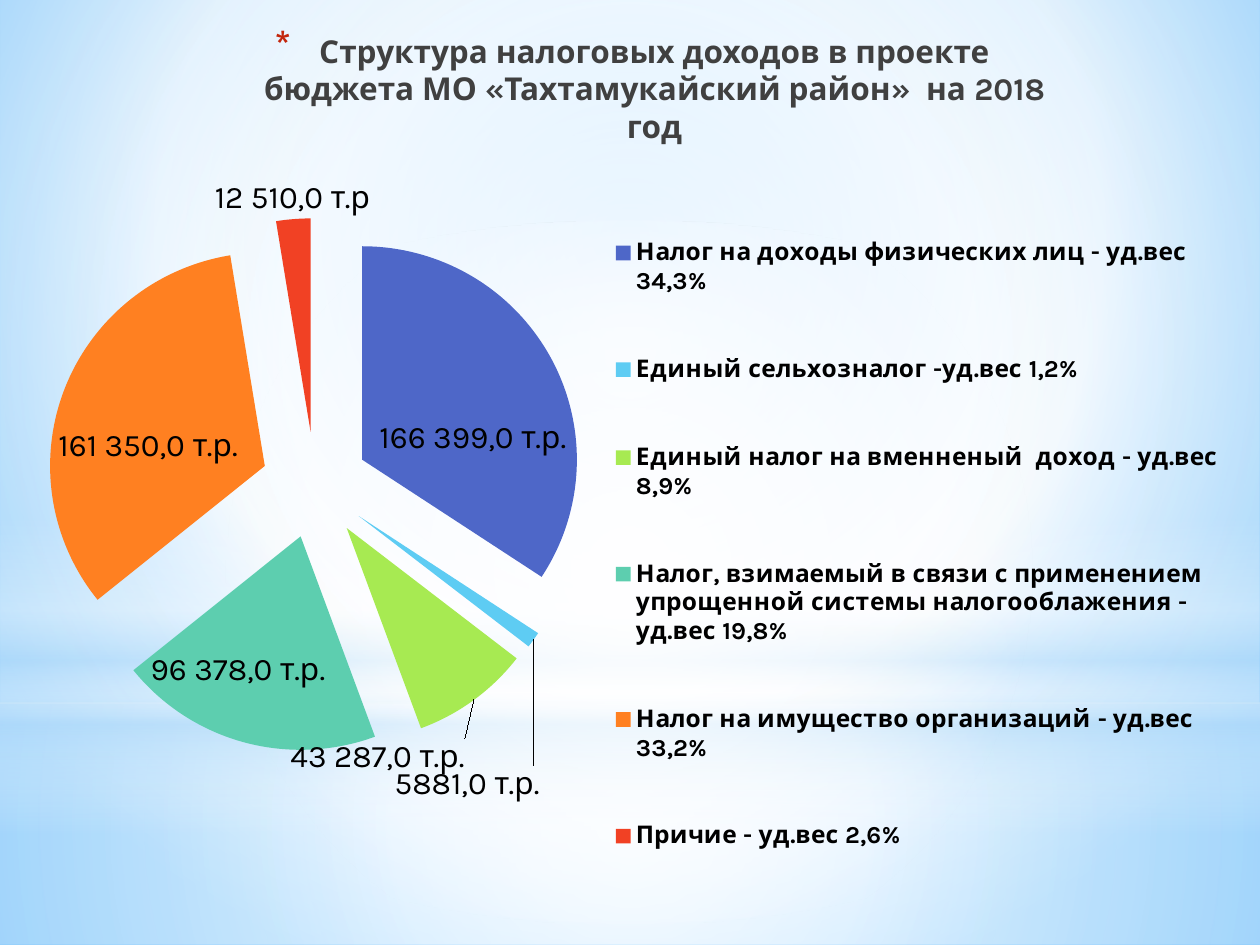
from lxml.etree import SubElement
from pptx import Presentation
from pptx.chart.data import CategoryChartData
from pptx.dml.color import RGBColor
from pptx.enum.chart import XL_CHART_TYPE, XL_LABEL_POSITION, XL_LEGEND_POSITION
from pptx.enum.shapes import MSO_SHAPE
from pptx.enum.text import MSO_ANCHOR, PP_ALIGN
from pptx.oxml.ns import qn
from pptx.util import Inches, Pt

FONT = "Karla"
BLACK = RGBColor(0x00, 0x00, 0x00)
DARK_GREY = RGBColor(0x40, 0x40, 0x40)
BULLET_RED = RGBColor(0xC3, 0x26, 0x0C)
WHITE = RGBColor(0xFF, 0xFF, 0xFF)
PALE_BLUE = RGBColor(0xB4, 0xDC, 0xFA)
SKY_BLUE = RGBColor(0x9E, 0xD5, 0xFF)
DEEP_SKY = RGBColor(0x5B, 0xB9, 0xFF)

TITLE_FORMAT = {"name": FONT, "size": Pt(18), "bold": True}
LABEL_FORMAT = {"name": FONT, "size": Pt(18), "bold": False}
LEGEND_FORMAT = {"name": FONT, "size": Pt(14), "bold": True}

TITLE = "Структура налоговых доходов в проекте бюджета МО «Тахтамукайский район»  на 2018 год"
CHART_WIDTH, CHART_HEIGHT = 9.76, 5.83
CENTER, OUTSIDE = XL_LABEL_POSITION.CENTER, XL_LABEL_POSITION.OUTSIDE_END
# category, value, slice colour, label, label position, label shift in inches
TAXES = [
    ("Налог на доходы физических лиц - уд.вес 34,3%", 166399,
     RGBColor(0x4E, 0x67, 0xC8), "166 399,0 т.р.", CENTER, (0.13, 0.23)),
    ("Единый сельхозналог -уд.вес 1,2%", 5881,
     RGBColor(0x5E, 0xCC, 0xF3), "5881,0 т.р.", OUTSIDE, (-1.15, 0.97)),
    ("Единый налог на вменненый  доход - уд.вес 8,9%", 43287,
     RGBColor(0xA7, 0xEA, 0x52), "43 287,0 т.р.", OUTSIDE, (-1.49, 0.26)),
    ("Налог, взимаемый в связи с применением  упрощенной системы "
     "налогооблажения - уд.вес 19,8%", 96378,
     RGBColor(0x5D, 0xCE, 0xAF), "96 378,0 т.р.", CENTER, (-0.27, 0.25)),
    ("Налог на имущество организаций - уд.вес 33,2%", 161350,
     RGBColor(0xFF, 0x80, 0x21), "161 350,0 т.р.", CENTER, (-0.13, 0.15)),
    ("Причие - уд.вес 2,6%", 12510,
     RGBColor(0xF1, 0x41, 0x24), "12 510,0 т.р", OUTSIDE, None),
]

MIDDLE = (50, 50, 50, 50)
# preset, (left, top, width, height), stops (position, colour, opacity), focus
GLOWS = [
    (MSO_SHAPE.RECTANGLE, (0, 5.58, 10, 1.92),
     [(0, WHITE, 91), (37, WHITE, 76), (100, PALE_BLUE, 79)], MIDDLE),
    (MSO_SHAPE.RECTANGLE, (0, 0, 10, 5.58),
     [(0, WHITE, 89), (48, WHITE, 62), (100, PALE_BLUE, 79)], MIDDLE),
    (MSO_SHAPE.RECTANGLE, (0, 4.12, 10, 2.5),
     [(0, WHITE, 0), (29, WHITE, 30), (45, PALE_BLUE, 40),
      (55, WHITE, 26), (65, PALE_BLUE, 60), (100, WHITE, 0)], None),
    (MSO_SHAPE.OVAL, (0, 1.75, 10, 5.58),
     [(0, WHITE, 100), (56, WHITE, 0)], MIDDLE),
]


def set_font(font, values, color):
    for attribute, value in values.items():
        setattr(font, attribute, value)
    font.color.rgb = color


def set_gradient(fill, owner, stops, focus):
    """Fill with a circular gradient around focus, or a vertical one without it."""
    fill.gradient()
    gradient = next(owner.iter(qn("a:gradFill")))
    for child in list(gradient):
        gradient.remove(child)
    stop_list = SubElement(gradient, qn("a:gsLst"))
    for position, color, opacity in stops:
        stop = SubElement(stop_list, qn("a:gs"), pos=str(position * 1000))
        shade = SubElement(stop, qn("a:srgbClr"), val=str(color))
        if opacity < 100:
            SubElement(shade, qn("a:alpha"), val=str(opacity * 1000))
    if focus:
        circle = SubElement(gradient, qn("a:path"), path="circle")
        sides = {side: str(part * 1000) for side, part in zip("ltrb", focus)}
        SubElement(circle, qn("a:fillToRect"), **sides)
    else:
        SubElement(gradient, qn("a:lin"), ang="5400000", scaled="0")


def add_glow(slide, preset, box, stops, focus):
    glow = slide.shapes.add_shape(preset, *map(Inches, box))
    glow.shadow.inherit = False
    glow.line.fill.background()
    set_gradient(glow.fill, glow.element.spPr, stops, focus)


def add_title(slide):
    title = slide.shapes.add_textbox(*map(Inches, (1.46, 0.19, 7.12, 1.02)))
    frame = title.text_frame
    frame.word_wrap = True
    frame.vertical_anchor = MSO_ANCHOR.MIDDLE
    paragraph = frame.paragraphs[0]
    paragraph.alignment = PP_ALIGN.CENTER
    run = paragraph.add_run()
    run.text = TITLE
    set_font(run.font, TITLE_FORMAT, DARK_GREY)
    properties = paragraph._p.get_or_add_pPr()
    properties.set("marL", str(Inches(0.35)))
    properties.set("indent", str(Inches(-0.35)))
    bullet_color = SubElement(properties, qn("a:buClr"))
    SubElement(bullet_color, qn("a:srgbClr"), val=str(BULLET_RED))
    SubElement(properties, qn("a:buSzPct"), val="128000")
    SubElement(properties, qn("a:buChar"), char="*")


def set_layout(parent, after, modes, **lengths):
    """Place a chart part by lengths in inches; its layout follows the child after."""
    for old in parent.findall(qn("c:layout")):
        parent.remove(old)
    layout = SubElement(parent, qn("c:layout"))
    manual = SubElement(layout, qn("c:manualLayout"))
    for tag, value in modes.items():
        SubElement(manual, qn(f"c:{tag}"), val=value)
    for tag, length in lengths.items():
        whole = CHART_WIDTH if tag in "xw" else CHART_HEIGHT
        SubElement(manual, qn(f"c:{tag}"), val=str(length / whole))
    if after:
        parent.find(qn(after)).addnext(layout)
    else:
        parent.insert(0, layout)


def add_tax_pie(slide):
    data = CategoryChartData(number_format="0.0")
    data.categories = [tax[0] for tax in TAXES]
    data.add_series("Series 1", [tax[1] for tax in TAXES])
    box = map(Inches, (0.12, 1.39, CHART_WIDTH, CHART_HEIGHT))
    chart = slide.shapes.add_chart(XL_CHART_TYPE.PIE, *box, data).chart
    chart.has_title = False
    set_font(chart.font, LABEL_FORMAT, BLACK)
    chart.has_legend = True
    legend = chart.legend
    legend.position = XL_LEGEND_POSITION.RIGHT
    legend.include_in_layout = False
    set_font(legend.font, LEGEND_FORMAT, BLACK)
    plot = chart.plots[0]
    plot.vary_by_categories = True
    series = plot.series[0]
    labels = series.data_labels
    labels.show_value = True
    labels.number_format = "0.0"
    labels.number_format_is_linked = False
    set_font(labels.font, LABEL_FORMAT, BLACK)
    for index, (_, _, color, text, position, _) in enumerate(TAXES):
        point = series.points[index]
        point.format.fill.solid()
        point.format.fill.fore_color.rgb = color
        point.format.line.fill.background()
        label = point.data_label
        run = label.text_frame.paragraphs[0].add_run()
        run.text = text
        set_font(run.font, LABEL_FORMAT, BLACK)
        label.position = position

    root = chart.element
    first_point = next(root.iter(qn("c:dPt")))
    explosion = SubElement(first_point.getparent(), qn("c:explosion"), val="25")
    first_point.addprevious(explosion)
    for label_part, tax in zip(root.iter(qn("c:dLbl")), TAXES):
        if tax[5]:
            set_layout(label_part, "c:idx", {}, x=tax[5][0], y=tax[5][1])
    edges = {"xMode": "edge", "yMode": "edge"}
    set_layout(next(root.iter(qn("c:plotArea"))), None,
               {"layoutTarget": "inner", **edges}, x=0.01, y=0.31, w=4.74, h=4.26)
    set_layout(next(root.iter(qn("c:legend"))), "c:legendPos",
               edges, x=4.66, y=0, w=5, h=CHART_HEIGHT)


def main():
    deck = Presentation()
    deck.slide_width, deck.slide_height = Inches(10), Inches(7.5)
    slide = deck.slides.add_slide(deck.slide_layouts[6])
    set_gradient(slide.background.fill, slide.element,
                 [(0, SKY_BLUE, 100), (60, WHITE, 100), (100, DEEP_SKY, 100)],
                 (20, 10, 20, 60))
    for glow in GLOWS:
        add_glow(slide, *glow)
    add_title(slide)
    add_tax_pie(slide)
    deck.save("out.pptx")


if __name__ == "__main__":
    main()
